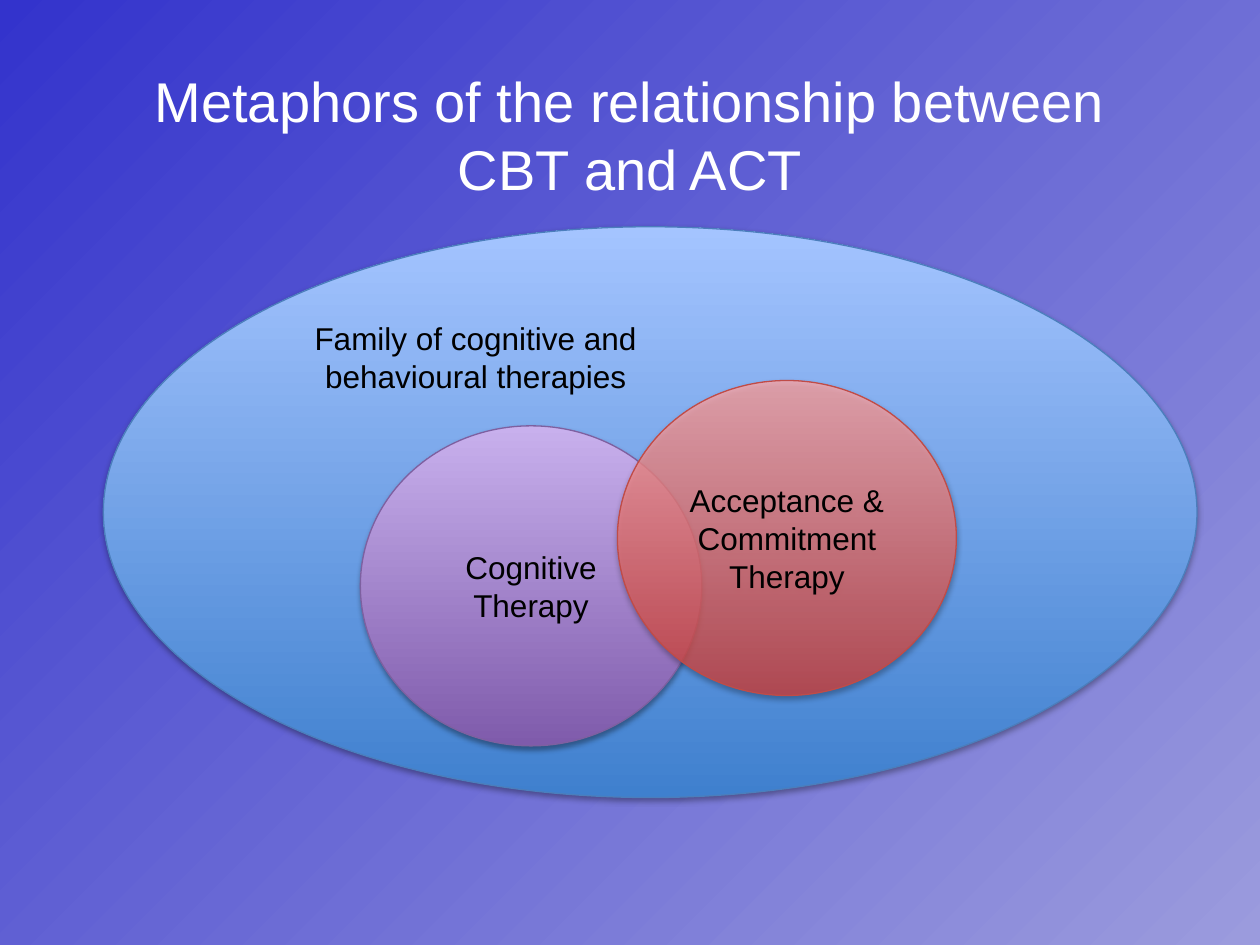
from pptx import Presentation
from pptx.dml.color import RGBColor as RGB
from pptx.enum.shapes import MSO_SHAPE as Kind
from pptx.enum.text import MSO_ANCHOR as Anchor, PP_ALIGN as Align
from pptx.oxml import parse_xml
from pptx.oxml.ns import nsdecls
from pptx.util import Inches, Pt

HUES = {
    "ink": "000000", "title": "FFFFFF",
    "back": ("3333CC", "9B9BDD"),
    "family": ("3F80CE", "A4C4FF"), "family line": "4B7EBC",
    "ct": ("7F5BAB", "C8B0ED"), "ct line": "7D60A0",
    "act": ("D1403C", "FFA6A5"), "act line": "BF4C48",
}


def blend(fill, hues, angle, alpha=None):
    """Fill with two colours; angle runs counter-clockwise."""
    fill.gradient()
    fill.gradient_angle = angle
    for pos, (stop, hue) in enumerate(zip(fill.gradient_stops, hues)):
        stop.position = pos
        stop.color.rgb = RGB.from_string(hue)
    if alpha:
        for clr in fill._xPr.iter("{*}srgbClr"):
            clr.append(parse_xml(f'<a:alpha {nsdecls("a")} val="{alpha * 1000}"/>'))


def shade(shape):
    """Give the shape a soft shadow straight below it."""
    shape._element.spPr.append(parse_xml(
        f'<a:effectLst {nsdecls("a")}>'
        f'<a:outerShdw blurRad="{Pt(3.1)}" dist="{Pt(1.8)}" dir="5400000" rotWithShape="0">'
        '<a:srgbClr val="000000"><a:alpha val="35000"/></a:srgbClr>'
        '</a:outerShdw></a:effectLst>'))


def write(shape, text, size=18, hue="ink"):
    frame = shape.text_frame
    frame.word_wrap = True
    frame.vertical_anchor = Anchor.MIDDLE
    frame.text = text
    para = frame.paragraphs[0]
    para.alignment = Align.CENTER
    para.font.name = "Arial"
    para.font.size = Pt(size)
    para.font.color.rgb = RGB.from_string(HUES[hue])


def add_oval(slide, box, name, text=None, alpha=None):
    oval = slide.shapes.add_shape(Kind.OVAL, *map(Inches, box))
    blend(oval.fill, HUES[name], 90, alpha)
    oval.line.color.rgb = RGB.from_string(HUES[name + " line"])
    oval.line.width = Pt(0.75)
    shade(oval)
    if text:
        write(oval, text)


def add_title(slide, box, text):
    title = slide.shapes.title
    title.left, title.top, title.width, title.height = map(Inches, box)
    write(title, text, 32, "title")


def add_label(slide, box, text):
    write(slide.shapes.add_textbox(*map(Inches, box)), text)


def main():
    deck = Presentation()
    deck.slide_width, deck.slide_height = Inches(10), Inches(7.5)
    slide = deck.slides.add_slide(deck.slide_layouts[5])
    blend(slide.background.fill, HUES["back"], 315)
    add_title(slide, (0.75, 0.44, 8.5, 1.25),
              "Metaphors of the relationship between CBT and ACT")
    add_oval(slide, (0.82, 1.8, 8.68, 4.53), "family")
    add_oval(slide, (2.86, 3.38, 2.71, 2.54), "ct", "Cognitive Therapy")
    add_oval(slide, (4.9, 3.02, 2.69, 2.5), "act",
             "Acceptance & Commitment Therapy", 76)
    add_label(slide, (2.19, 2.48, 3.17, 0.71),
              "Family of cognitive and behavioural therapies")
    deck.save("out.pptx")


if __name__ == "__main__":
    main()
